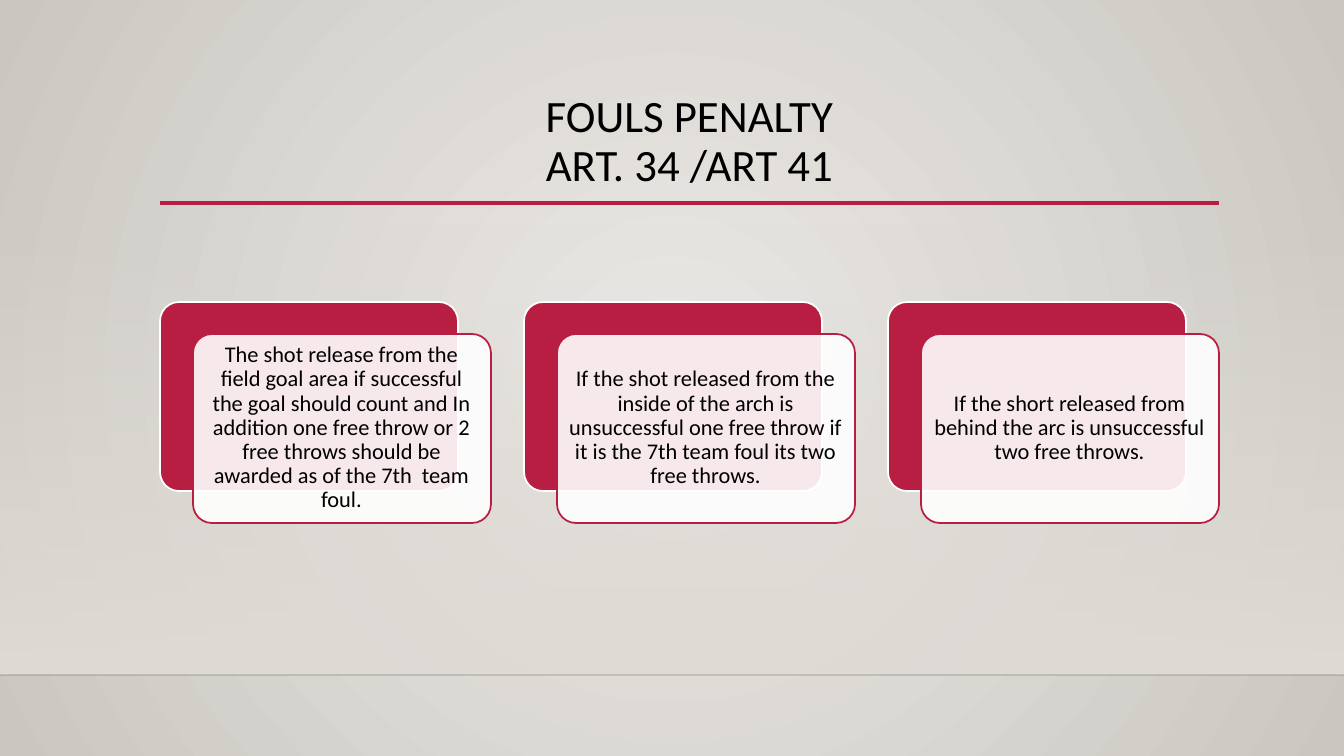
from lxml import etree
from pptx import Presentation
from pptx.dml.color import RGBColor
from pptx.enum.shapes import MSO_CONNECTOR, MSO_SHAPE
from pptx.enum.text import MSO_ANCHOR, PP_ALIGN
from pptx.oxml import parse_xml
from pptx.oxml.ns import nsdecls, qn
from pptx.util import Pt

PX = 914400 / 100.8
FONT = "Calibri"
BLACK = RGBColor(0x00, 0x00, 0x00)
WHITE = RGBColor(0xFF, 0xFF, 0xFF)
CRIMSON = RGBColor(0xB7, 0x1E, 0x42)
SHADE = RGBColor(0x00, 0x00, 0x01)
PALE = RGBColor(0xEC, 0xEA, 0xE7)
STONE = RGBColor(0xCA, 0xC7, 0xC1)
WALL = RGBColor(0xDF, 0xDB, 0xD5)

TITLE = ["FOULS PENALTY", "ART. 34 /ART 41"]
RULES = [
    "The shot release from the field goal area if successful the goal should count "
    "and In addition one free throw or 2 free throws should be awarded as of the 7th  team foul.",
    "If the shot released from the inside of the arch is unsuccessful one free throw "
    "if it is the 7th team foul its two free throws.",
    "If the short released from behind the arc is unsuccessful two free throws.",
]


def px(*lengths):
    """Turn pixel lengths into EMU."""
    return [round(n * PX) for n in lengths]


def set_alpha(color_format_parent, percent):
    """Give the solid colour inside an element an opacity."""
    color = color_format_parent.find(".//" + qn("a:srgbClr"))
    etree.SubElement(color, qn("a:alpha"), val=str(percent * 1000))


def gradient(start, end, direction, start_alpha=100):
    """Build a two-stop gradient fill element."""
    return parse_xml(
        f'<a:gradFill {nsdecls("a")} rotWithShape="1"><a:gsLst>'
        f'<a:gs pos="0"><a:srgbClr val="{start}"><a:alpha val="{start_alpha * 1000}"/></a:srgbClr></a:gs>'
        f'<a:gs pos="100000"><a:srgbClr val="{end}"/></a:gs>'
        f'</a:gsLst>{direction}</a:gradFill>')


def add_background(s):
    """Paint the slide with a radial gradient."""
    bg = parse_xml(f'<p:bg {nsdecls("p", "a")}><p:bgPr><a:effectLst/></p:bgPr></p:bg>')
    circle = '<a:path path="circle"><a:fillToRect l="50000" t="50000" r="50000" b="50000"/></a:path>'
    bg[0].insert(0, gradient(PALE, STONE, circle))
    s.element.cSld.insert(0, bg)


def add_wall(s, x, y, w, h):
    """Add the band that fades in towards the floor line."""
    sp = s.shapes.add_shape(MSO_SHAPE.RECTANGLE, *px(x, y, w, h))
    sp.shadow.inherit = False
    sp.line.fill.background()
    fade = gradient(WALL, WALL, '<a:lin ang="5400000" scaled="0"/>', 0)
    sp.element.spPr.find(qn("a:prstGeom")).addnext(fade)


def add_rule(s, x1, x2, y, color, width, alpha=100):
    """Add a horizontal line."""
    line = s.shapes.add_connector(MSO_CONNECTOR.STRAIGHT, *px(x1, y, x2, y))
    line.line.color.rgb = color
    line.line.width = Pt(width)
    if alpha < 100:
        set_alpha(line.line._ln, alpha)
    etree.SubElement(line._element.spPr, qn("a:effectLst"))


def add_text(s, box, lines, size, inset, anchor):
    """Add a centred text box with one paragraph."""
    tf = s.shapes.add_textbox(*px(*box)).text_frame
    tf.word_wrap = True
    tf.vertical_anchor = anchor
    tf.margin_left, tf.margin_top, tf.margin_right, tf.margin_bottom = px(*inset)
    p = tf.paragraphs[0]
    p.alignment = PP_ALIGN.CENTER
    p.line_spacing = 0.9
    for i, line in enumerate(lines):
        if i:
            p.add_line_break()
        r = p.add_run()
        r.text = line
        r.font.size = Pt(size)
        r.font.name = FONT
        r.font.color.rgb = BLACK


def add_panel(s, x, y, fill, outline, opacity=100):
    """Add one rounded panel of a card."""
    sp = s.shapes.add_shape(MSO_SHAPE.ROUNDED_RECTANGLE, *px(x, y, 298, 189))
    sp.shadow.inherit = False
    sp.adjustments[0] = 0.1
    sp.fill.solid()
    sp.fill.fore_color.rgb = fill
    sp.line.color.rgb = outline
    sp.line.width = Pt(1.25)
    if opacity < 100:
        set_alpha(sp.element.spPr.find(qn("a:solidFill")), opacity)


def add_card(s, x, y, text):
    """Add a crimson panel with an offset white panel and its text."""
    add_panel(s, x, y, CRIMSON, WHITE)
    add_panel(s, x + 33, y + 32, WHITE, CRIMSON, 90)
    add_text(s, (x + 38, y + 37, 287, 178), [text], 16, (7, 7, 7, 7), MSO_ANCHOR.MIDDLE)


def main():
    """Build the slide and save it."""
    prs = Presentation()
    prs.slide_width, prs.slide_height = px(1344, 756)
    s = prs.slides.add_slide(prs.slide_layouts[6])
    add_background(s)
    add_wall(s, 0, 223, 1344, 452)
    add_rule(s, 0, 1344, 675, SHADE, 1, 20)
    add_rule(s, 160, 1219, 203, CRIMSON, 2.5)
    add_text(s, (160, 89, 1059, 115), TITLE, 32, (10, 5, 10, 5), MSO_ANCHOR.TOP)
    for i, text in enumerate(RULES):
        add_card(s, 160 + 364 * i, 302, text)
    prs.save("out.pptx")


if __name__ == "__main__":
    main()
